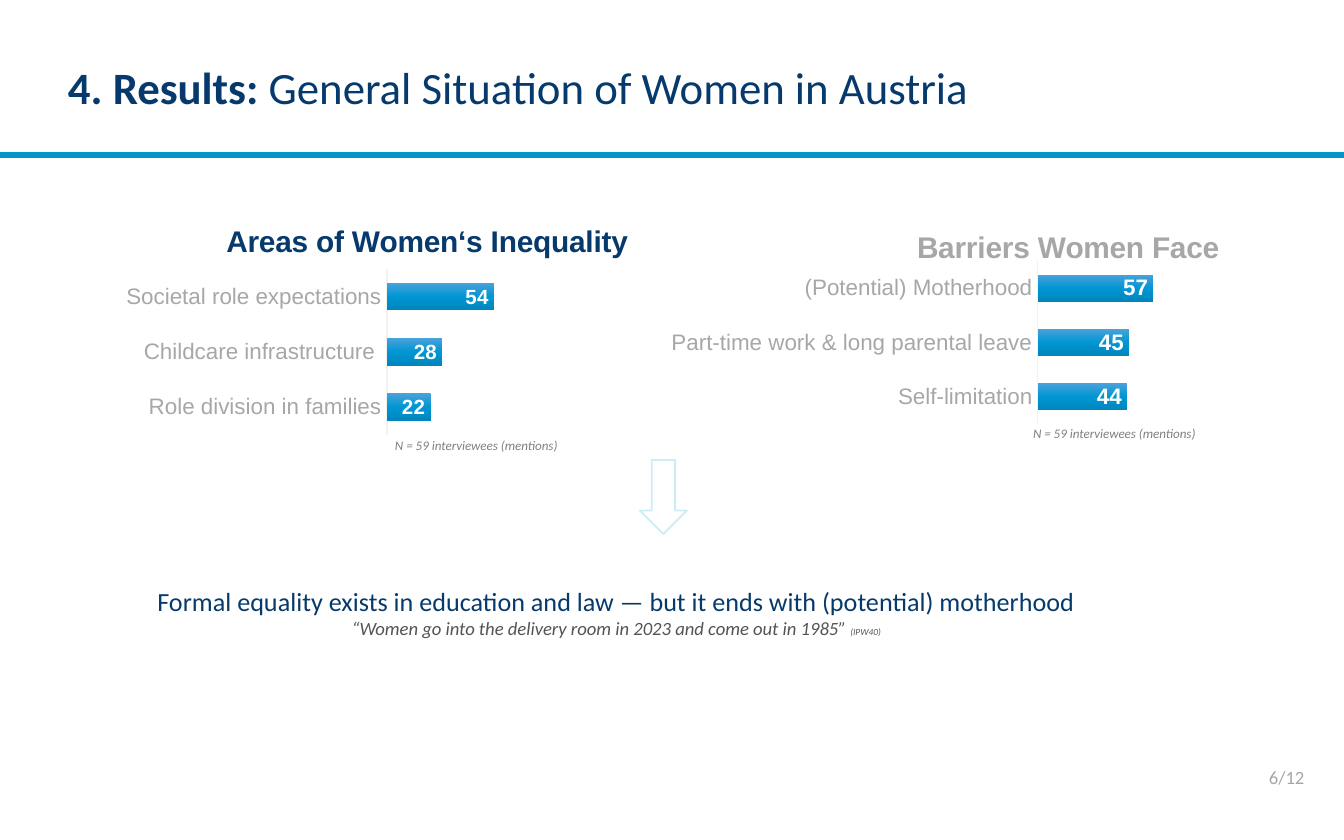
import pptx
import pptx.util
import pptx.oxml
import pptx.chart.data
import pptx.dml.color
import pptx.enum.chart
import pptx.enum.shapes
import pptx.enum.text

RGB = pptx.dml.color.RGBColor
NAVY = RGB(0x07, 0x3A, 0x6C)
TEAL = RGB(0x0C, 0x94, 0xB7)
BLUE = RGB(0x00, 0x96, 0xD3)
SKY = RGB(0x4B, 0xA2, 0xDA)
DEEP = RGB(0x00, 0x85, 0xBC)
PALE = RGB(0xCC, 0xEC, 0xF6)
WHITE = RGB(0xFF, 0xFF, 0xFF)
BLACK = RGB(0x00, 0x00, 0x00)
FAINT = RGB(0xF2, 0xF2, 0xF2)
SILVER = RGB(0xA7, 0xA7, 0xA7)
PAGE_GREY = RGB(0xA6, 0xA6, 0xA6)
NOTE_GREY = RGB(0x80, 0x80, 0x80)
QUOTE_GREY = RGB(0x54, 0x54, 0x54)

ALIGN = pptx.enum.text.PP_ALIGN
ANCHOR = pptx.enum.text.MSO_ANCHOR
SHAPE = pptx.enum.shapes.MSO_SHAPE
PX = 914400 / 134.4

HEADING = [[("4. Results:", 24, NAVY, True, False),
            (" General Situation of Women in Austria", 24, NAVY, False, False)]]
CONCLUSION = [
    [("Formal equality exists in education and law — but it ends with (potential) motherhood",
      14, NAVY, False, False)],
    [("“Women go into the delivery room in 2023 and come out in 1985”\u00a0",
      10, QUOTE_GREY, False, True),
     ("(IPW40)", 5, QUOTE_GREY, False, True)],
]
SAMPLE_NOTE = [[("N = 59 interviewees (mentions)", 7, NOTE_GREY, False, True)]]
PAGE_NUMBER = [[("6/12", 10, PAGE_GREY, False, False)]]

CHARTS = [
    {"title": "Areas of Women‘s Inequality", "color": NAVY, "title_at": (221, 217),
     "frame": (105, 211, 648, 266), "plot": (387, 269, 119, 166), "label_size": 11,
     "bars": [("Role division in families", 22), ("Childcare infrastructure ", 28),
              ("Societal role expectations", 54)]},
    {"title": "Barriers Women Face", "color": SILVER, "title_at": (912, 223),
     "frame": (508, 219, 738, 218), "plot": (1038, 261, 122, 163), "label_size": 12,
     "bars": [("Self-limitation", 44), ("Part-time work & long parental leave", 45),
              ("(Potential) Motherhood", 57)]},
]
NOTES_AT = [(382, 430), (1020, 418)]


def px(*lengths):
    return [round(length * PX) for length in lengths]


def style(font, size, color, bold=False, italic=False, name="Calibri"):
    font.name, font.size = name, pptx.util.Pt(size)
    font.bold, font.italic = bold, italic
    font.color.rgb = color


def add_text(page, frame, paragraphs, align=ALIGN.LEFT, anchor=ANCHOR.TOP, insets=(13, 7)):
    box = page.shapes.add_textbox(*px(*frame)).text_frame
    box.word_wrap, box.vertical_anchor = True, anchor
    box.margin_left = box.margin_right = px(insets[0])[0]
    box.margin_top = box.margin_bottom = px(insets[1])[0]
    for index, spans in enumerate(paragraphs):
        para = box.add_paragraph() if index else box.paragraphs[0]
        para.alignment = align
        for text, *look in spans:
            span = para.add_run()
            span.text = text
            style(span.font, *look)


def add_block(page, kind, frame, fill, line):
    block = page.shapes.add_shape(kind, *px(*frame))
    block.shadow.inherit = False
    block.fill.solid()
    block.fill.fore_color.rgb = fill
    block.line.color.rgb = line
    block.line.width = pptx.util.Pt(1)


def chart_xml(body):
    return pptx.oxml.parse_xml(body.replace(
        ">", ' xmlns:c="http://schemas.openxmlformats.org/drawingml/2006/chart"'
             ' xmlns:a="http://schemas.openxmlformats.org/drawingml/2006/main">', 1))


def layout(frame, place, inner=False):
    left, top, width, height = frame
    values = [("x", (place[0] - left) / width), ("y", (place[1] - top) / height)]
    if inner:
        values += [("w", place[2] / width), ("h", place[3] / height)]
    target = '<c:layoutTarget val="inner"/>' if inner else ""
    modes = "".join(f'<c:{key}Mode val="edge"/>' for key in "xy")
    sizes = "".join(f'<c:{key} val="{value:.3f}"/>' for key, value in values)
    return chart_xml(f"<c:layout><c:manualLayout>{target}{modes}{sizes}"
                     "</c:manualLayout></c:layout>")


def replace_layout(parent, new, before):
    for old in parent.findall(new.tag):
        parent.remove(old)
    namespace = new.tag.split("}")[0] + "}"
    parent.find(namespace + before).addprevious(new)


def gradient(stops):
    marks = "".join(f'<a:gs pos="{position * 1000}"><a:srgbClr val="{color}"/></a:gs>'
                    for position, color in stops)
    return chart_xml(f'<a:gradFill><a:gsLst>{marks}</a:gsLst>'
                     '<a:lin ang="5400000" scaled="0"/></a:gradFill>')


def add_bars(page, item):
    data = pptx.chart.data.CategoryChartData()
    data.categories = [name for name, _ in item["bars"]]
    data.add_series("Series 1", [value for _, value in item["bars"]])
    chart = page.shapes.add_chart(pptx.enum.chart.XL_CHART_TYPE.BAR_CLUSTERED,
                                  *px(*item["frame"]), data).chart
    style(chart.font, 10, BLACK, name="Arial")
    chart.has_legend = False
    chart.has_title = True
    title = chart.chart_title
    title.include_in_layout = False
    span = title.text_frame.paragraphs[0].add_run()
    span.text = item["title"]
    style(span.font, 16, item["color"], bold=True, name="Arial")

    names, scale = chart.category_axis, chart.value_axis
    names.major_tick_mark = pptx.enum.chart.XL_TICK_MARK.NONE
    style(names.tick_labels.font, 12, SILVER, name="Arial")
    names.format.line.color.rgb = FAINT
    names.format.line.width = pptx.util.Pt(0.75)
    scale.visible = scale.has_major_gridlines = False
    scale.minimum_scale, scale.maximum_scale = 0, 60

    plot = chart.plots[0]
    plot.gap_width, plot.vary_by_categories = 100, False
    series = plot.series[0]
    series.format.fill.background()
    properties = series.format.fill._xPr
    properties.replace(properties[0], gradient([(0, SKY), (50, BLUE), (100, DEEP)]))
    labels = series.data_labels
    labels.show_value = True
    labels.position = pptx.enum.chart.XL_LABEL_POSITION.INSIDE_END
    style(labels.font, item["label_size"], WHITE, bold=True, name="Arial")

    replace_layout(title._element, layout(item["frame"], item["title_at"]), "overlay")
    area = plot._element.getparent()
    replace_layout(area, layout(item["frame"], item["plot"], inner=True), "barChart")


def main():
    deck = pptx.Presentation()
    deck.slide_width, deck.slide_height = px(1344, 840)
    page = deck.slides.add_slide(deck.slide_layouts[6])
    add_block(page, SHAPE.RECTANGLE, (0, 153, 1344, 4), TEAL, BLUE)
    add_text(page, (68, 20, 1005, 133), HEADING, anchor=ANCHOR.MIDDLE, insets=(0, 0))
    add_text(page, (105, 585, 1023, 386 - 140), CONCLUSION, ALIGN.CENTER, insets=(0, 0))
    for item in CHARTS:
        add_bars(page, item)
    add_text(page, (1262, 759, 80, 36), PAGE_NUMBER, insets=(7, 7))
    add_block(page, SHAPE.DOWN_ARROW, (640, 460, 47, 74), WHITE, PALE)
    for left, top in NOTES_AT:
        add_text(page, (left, top, 235, 30), SAMPLE_NOTE)
    deck.save("out.pptx")


if __name__ == "__main__":
    main()
